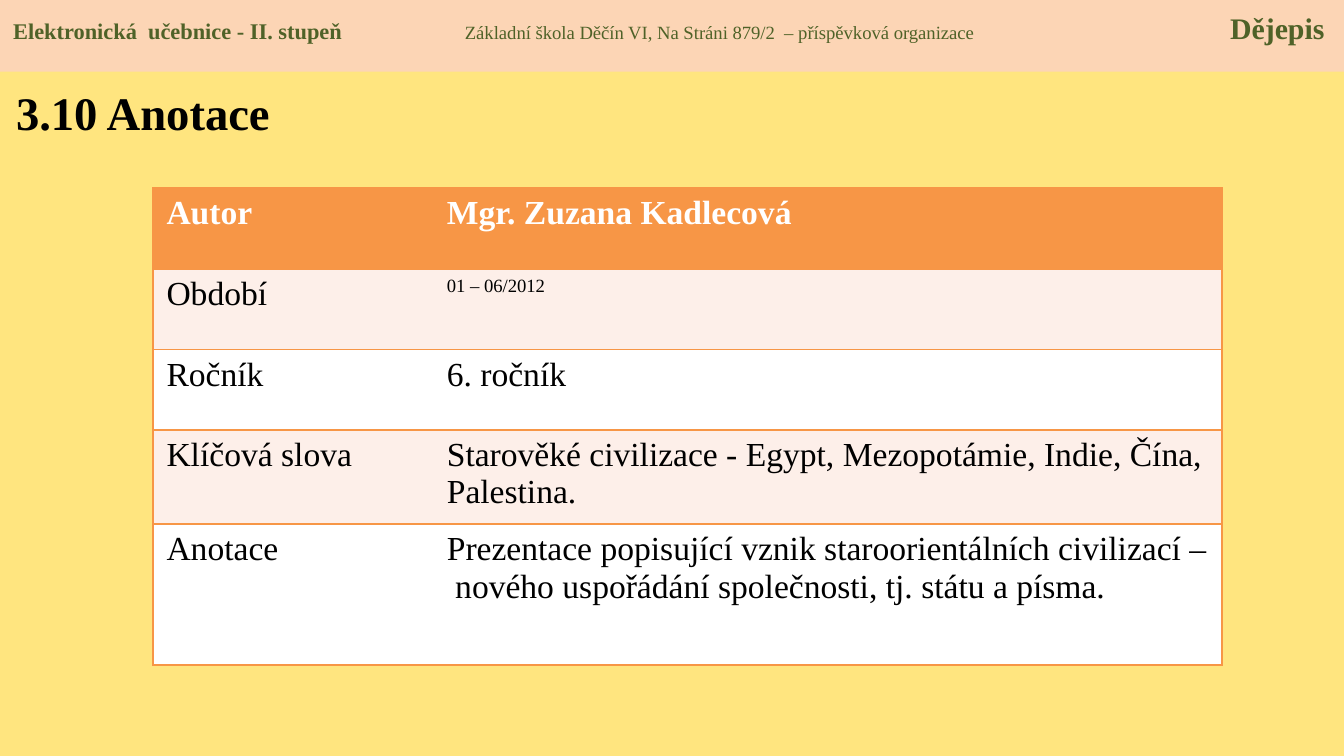
from lxml import etree
from pptx import Presentation
from pptx.dml.color import RGBColor
from pptx.enum.shapes import MSO_SHAPE
from pptx.enum.text import MSO_ANCHOR, PP_ALIGN
from pptx.oxml.ns import qn
from pptx.util import Pt

RECTANGLE = MSO_SHAPE.RECTANGLE
TOP = MSO_ANCHOR.TOP
LEFT = PP_ALIGN.LEFT

FONT = "Times New Roman"
COLORS = {
    "background": "FFE57F",
    "header": "FCD5B5",
    "header text": "4F6228",
    "accent": "F79646",
    "band": "FDEFE9",
    "white": "FFFFFF",
    "black": "000000",
}

# text, size, bold
HEADER = [
    ("Elektronická  učebnice - II. stupeň", 12, True),
    ("\tZákladní škola Děčín VI, Na Stráni 879/2  – příspěvková organizace", 10, False),
    ("\tDějepis", 16, True),
]
HEADER_TABS = [(242, "l"), (702.5, "r")]
TITLE = "3.10 Anotace"
# label, value, value size, row height
ROWS = [
    ("Autor", "Mgr. Zuzana Kadlecová", 18, 43.2),
    ("Období", "01 – 06/2012", 10, 43.2),
    ("Ročník", "6. ročník", 18, 43.2),
    ("Klíčová slova", "Starověké civilizace - Egypt, Mezopotámie, Indie, Čína, Palestina.", 18, 50.4),
    ("Anotace", "Prezentace popisující vznik staroorientálních civilizací –  nového "
     "uspořádání společnosti, tj. státu a písma.", 18, 75.6),
]
COLUMN_WIDTHS = [150.2, 422.4]
TABLE_LEFT, TABLE_TOP = 82, 100.8


def color(name):
    return RGBColor.from_string(COLORS[name])


def add_run(paragraph, text, size=18, bold=False, ink="black"):
    run = paragraph.add_run()
    run.text = text
    run.font.name = FONT
    run.font.size = Pt(size)
    run.font.bold = bold
    run.font.color.rgb = color(ink)


def set_borders(cell, sides):
    """Draw accent lines on the given sides; must precede the cell's fill."""
    properties = cell._tc.get_or_add_tcPr()
    for side in ("L", "R", "T", "B"):
        line = etree.SubElement(properties, qn(f"a:ln{side}"), w=str(Pt(1)))
        if side in sides:
            fill = etree.SubElement(line, qn("a:solidFill"))
            etree.SubElement(fill, qn("a:srgbClr"), val=COLORS["accent"])
        else:
            etree.SubElement(line, qn("a:noFill"))


def add_header(slide):
    shape = slide.shapes.add_shape(RECTANGLE, 0, 0, Pt(720), Pt(38.5))
    shape.shadow.inherit = False
    shape.fill.solid()
    shape.fill.fore_color.rgb = color("header")
    shape.line.fill.background()
    frame = shape.text_frame
    frame.word_wrap = True
    frame.vertical_anchor = TOP
    frame.margin_top = Pt(5)
    paragraph = frame.paragraphs[0]
    paragraph.alignment = LEFT
    tabs = etree.SubElement(paragraph._p.get_or_add_pPr(), qn("a:tabLst"))
    for position, alignment in HEADER_TABS:
        etree.SubElement(tabs, qn("a:tab"), pos=str(Pt(position)), algn=alignment)
    for text, size, bold in HEADER:
        add_run(paragraph, text, size=size, bold=bold, ink="header text")


def add_title(slide):
    box = slide.shapes.add_textbox(Pt(1.5), Pt(39.6), Pt(301.7), Pt(46.8))
    box.text_frame.word_wrap = True
    box.text_frame.margin_top = Pt(5.5)
    add_run(box.text_frame.paragraphs[0], TITLE, size=25, bold=True)


def add_annotation_table(slide):
    heights = [row[3] for row in ROWS]
    table = slide.shapes.add_table(
        len(ROWS), len(COLUMN_WIDTHS), Pt(TABLE_LEFT), Pt(TABLE_TOP),
        Pt(sum(COLUMN_WIDTHS)), Pt(sum(heights))).table
    for column, width in zip(table.columns, COLUMN_WIDTHS):
        column.width = Pt(width)
    for index, (label, value, value_size, height) in enumerate(ROWS):
        table.rows[index].height = Pt(height)
        is_head = index == 0
        fill = "accent" if is_head else ("white", "band")[index % 2]
        texts = [(label, 18, "LTB"), (value, value_size, "RTB")]
        for cell, (text, size, sides) in zip(table.rows[index].cells, texts):
            set_borders(cell, sides)
            cell.fill.solid()
            cell.fill.fore_color.rgb = color(fill)
            add_run(cell.text_frame.paragraphs[0], text, size=size, bold=is_head,
                    ink="white" if is_head else "black")


def main():
    presentation = Presentation()
    presentation.slide_width, presentation.slide_height = Pt(720), Pt(405)
    slide = presentation.slides.add_slide(presentation.slide_layouts[6])
    slide.background.fill.solid()
    slide.background.fill.fore_color.rgb = color("background")
    add_header(slide)
    add_title(slide)
    add_annotation_table(slide)
    presentation.save("out.pptx")


if __name__ == "__main__":
    main()
